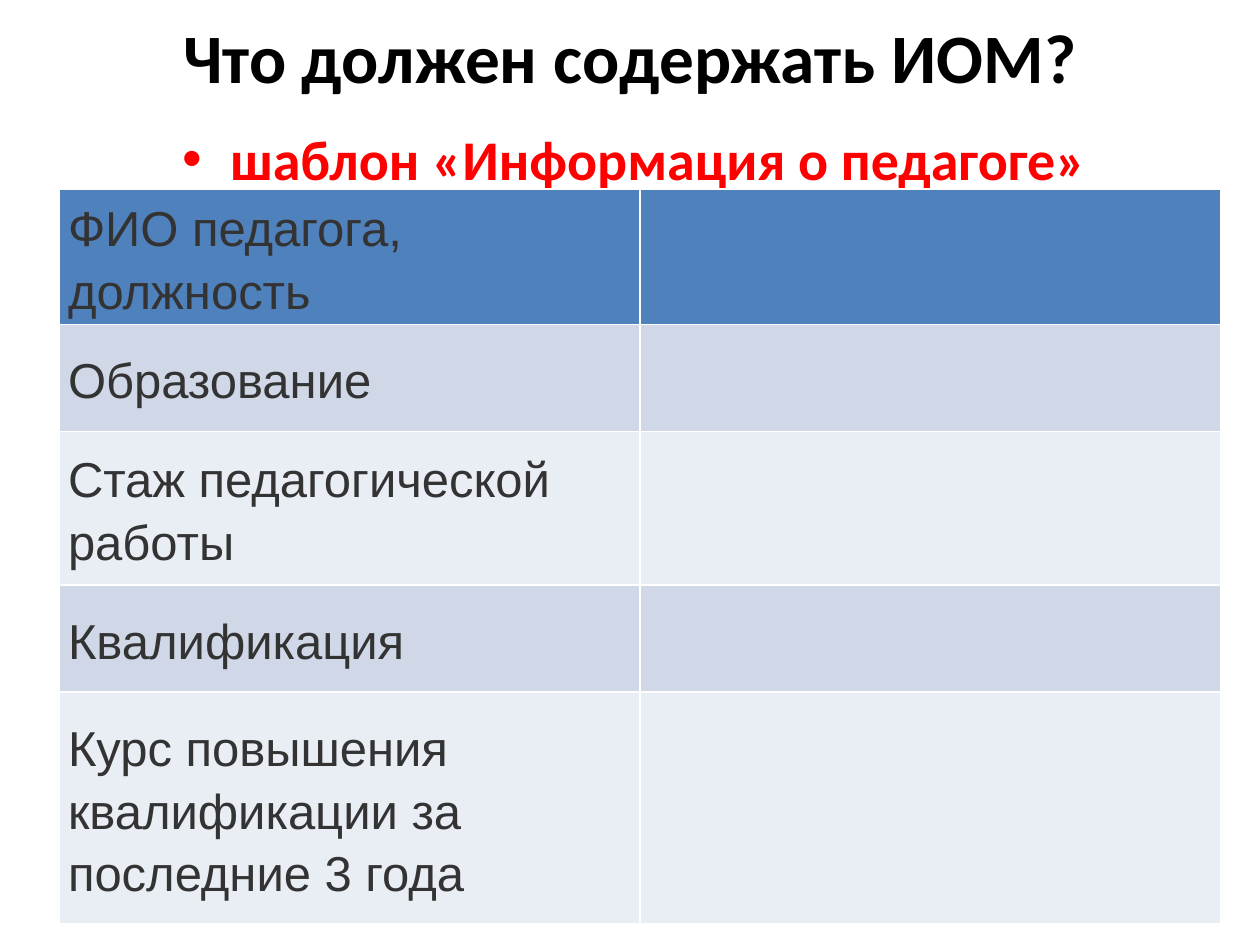
from pptx import Presentation
from pptx.dml.color import RGBColor as RGB
from pptx.enum.text import MSO_ANCHOR as Anchor, PP_ALIGN as Align
from pptx.oxml import parse_xml
from pptx.oxml.ns import nsdecls
from pptx.util import Inches, Pt

COLORS = {
    "title": "000000",
    "accent": "FF0000",
    "text": "333333",
    "header": "4F81BD",
    "band_dark": "D0D8E8",
    "band_light": "E9EDF4",
    "border": "FFFFFF",
}


def add_heading(left, top, width, height, text, size, color):
    box = slide.shapes.add_textbox(
        Inches(left), Inches(top), Inches(width), Inches(height))
    frame = box.text_frame
    frame.word_wrap = True
    line = frame.paragraphs[0]
    line.text = text
    line.alignment = Align.CENTER
    line.font.name = "Calibri"
    line.font.size = Pt(size)
    line.font.bold = True
    line.font.color.rgb = RGB.from_string(COLORS[color])
    return box


def set_borders(cell):
    props = cell._tc.get_or_add_tcPr()
    for position, side in enumerate(("lnL", "lnR", "lnT", "lnB")):
        props.insert(position, parse_xml(
            f'<a:{side} {nsdecls("a")} w="{Pt(1)}"><a:solidFill>'
            f'<a:srgbClr val="{COLORS["border"]}"/></a:solidFill></a:{side}>'))


prs = Presentation()
prs.slide_width, prs.slide_height = Inches(10), Inches(7.5)
slide = prs.slides.add_slide(prs.slide_layouts[6])

# Title
add_heading(0.31, 0.06, 9.38, 0.78, "Что должен содержать ИОМ?", 39.6, "title")

# Bulleted subtitle
subtitle = add_heading(0.31, 0.94, 9.45, 6.17,
                       "шаблон «Информация о педагоге»", 32, "accent")
bullet = subtitle.text_frame.paragraphs[0]._p.get_or_add_pPr()
bullet.set("marL", str(Inches(0.38)))
bullet.set("indent", str(Inches(-0.38)))
# The bullet goes before the default run properties
bullet.insert(0, parse_xml(f'<a:buFont {nsdecls("a")} typeface="Arial"/>'))
bullet.insert(1, parse_xml(f'<a:buChar {nsdecls("a")} char="•"/>'))

# Teacher information table: label, row height, fill
rows = [
    ("ФИО педагога, должность", 0.85, "header"),
    ("Образование", 0.85, "band_dark"),
    ("Стаж педагогической работы", 1.22, "band_light"),
    ("Квалификация", 0.85, "band_dark"),
    ("Курс повышения квалификации за последние 3 года", 1.84, "band_light"),
]
table = slide.shapes.add_table(
    len(rows), 2, Inches(0.47), Inches(1.5), Inches(9.22),
    Inches(sum(height for _, height, _ in rows))).table

for row, (label, height, fill) in zip(table.rows, rows):
    row.height = Inches(height)
    for cell in row.cells:
        cell.fill.solid()
        cell.fill.fore_color.rgb = RGB.from_string(COLORS[fill])
        set_borders(cell)

    label_cell = row.cells[0]
    label_cell.vertical_anchor = Anchor.MIDDLE
    label_cell.margin_left = label_cell.margin_right = Inches(0.07)
    label_cell.margin_top = label_cell.margin_bottom = 0
    line = label_cell.text_frame.paragraphs[0]
    line.text = label
    line.line_spacing = 1.15
    line.font.name = "Arial"
    line.font.size = Pt(28)
    line.font.bold = False
    line.font.color.rgb = RGB.from_string(COLORS["text"])

prs.save("out.pptx")
